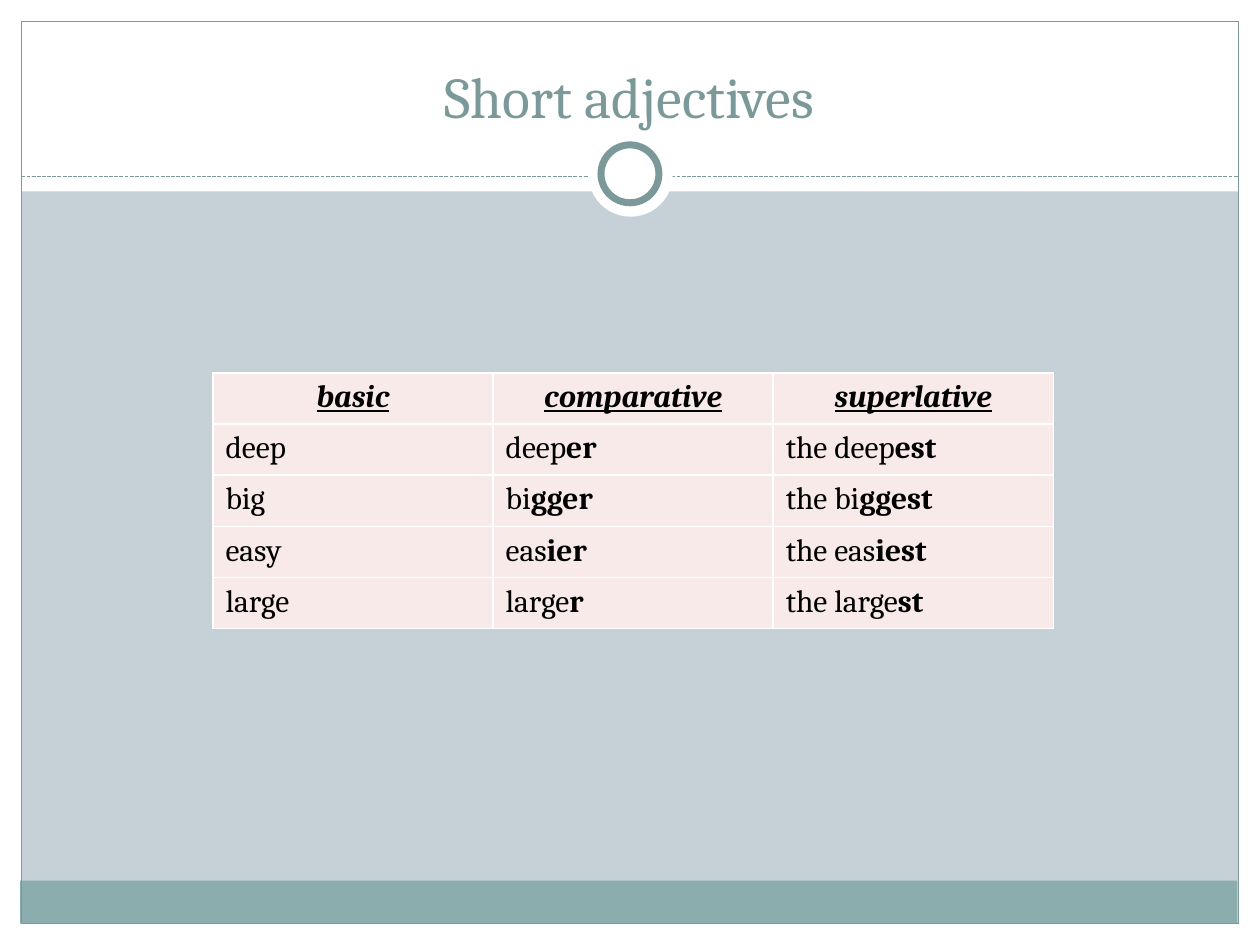
import dataclasses
import pptx
import pptx.util
import pptx.dml.color
import pptx.enum.dml
import pptx.enum.shapes
import pptx.enum.text
import pptx.oxml
import pptx.oxml.ns

Inches = pptx.util.Inches
Pt = pptx.util.Pt
Shape = pptx.enum.shapes.MSO_SHAPE
Align = pptx.enum.text.PP_ALIGN


@dataclasses.dataclass(frozen=True)
class Theme:
    back: str = "C5D1D7"
    white: str = "FFFFFF"
    band: str = "8CADAE"
    accent: str = "7C999A"
    cell: str = "F7EAE9"
    ink: str = "000000"
    face: str = "Cambria"
    title: int = 33
    body: int = 18


theme = Theme()

HEADS = ["basic", "comparative", "superlative"]
WORDS = [
    ("deep", "deep", "er", "est"),
    ("big", "bi", "gger", "ggest"),
    ("easy", "eas", "ier", "iest"),
    ("large", "large", "r", "st"),
]


def rgb(color):
    return pptx.dml.color.RGBColor.from_string(color)


def paint(fill, color):
    fill.solid()
    fill.fore_color.rgb = rgb(color)


def add_shape(slide, kind, box, fill=None, line=None, width=0.75):
    shape = slide.shapes.add_shape(kind, *map(Inches, box))
    shape.shadow.inherit = False
    if fill:
        paint(shape.fill, fill)
    else:
        shape.fill.background()
    if line:
        shape.line.color.rgb = rgb(line)
        shape.line.width = Pt(width)
    else:
        shape.line.fill.background()


def add_rule(slide, left, right, top):
    rule = slide.shapes.add_connector(
        pptx.enum.shapes.MSO_CONNECTOR.STRAIGHT,
        Inches(left), Inches(top), Inches(right), Inches(top))
    rule.line.color.rgb = rgb(theme.accent)
    rule.line.width = Pt(0.75)
    rule.line.dash_style = pptx.enum.dml.MSO_LINE.SQUARE_DOT
    props = rule._element.spPr
    props.append(pptx.oxml.parse_xml(
        f'<a:effectLst {pptx.oxml.ns.nsdecls("a")}/>'))


def set_font(para, size, color):
    para.font.name = theme.face
    para.font.size = Pt(size)
    para.font.color.rgb = rgb(color)


def add_title(slide, text):
    box = slide.shapes.add_textbox(*map(Inches, (0.33, 0.25, 9.33, 0.83)))
    frame = box.text_frame
    frame.word_wrap = True
    frame.vertical_anchor = pptx.enum.text.MSO_ANCHOR.BOTTOM
    para = frame.paragraphs[0]
    para.text = text
    para.alignment = Align.CENTER
    set_font(para, theme.title, theme.accent)


def add_frame(slide):
    rect, oval = Shape.RECTANGLE, Shape.OVAL
    for box in [(0, 7.33, 10, 0.17), (0, 0, 10, 1.52),
                (0, 0, 0.17, 7.5), (9.83, 0, 0.17, 7.5)]:
        add_shape(slide, rect, box, theme.white)
    add_shape(slide, rect, (0.16, 6.99, 9.66, 0.34), theme.band)
    add_shape(slide, rect, (0.17, 0.17, 9.66, 7.16), line=theme.accent)
    add_rule(slide, 0.17, 9.83, 1.4)
    add_shape(slide, oval, (4.67, 1.05, 0.67, 0.67), theme.white)
    add_shape(slide, oval, (4.77, 1.15, 0.46, 0.46), theme.white,
              theme.accent, 4)


def set_edges(cell):
    props = cell._tc.get_or_add_tcPr()
    for side in ("lnL", "lnR", "lnT", "lnB"):
        props.append(pptx.oxml.parse_xml(
            f'<a:{side} {pptx.oxml.ns.nsdecls("a")} w="{Pt(1)}"><a:solidFill>'
            f'<a:srgbClr val="{theme.white}"/></a:solidFill></a:{side}>'))


def fill_cell(cell, stem, end="", head=False):
    set_edges(cell)
    paint(cell.fill, theme.cell)
    para = cell.text_frame.paragraphs[0]
    para.add_run().text = stem
    set_font(para, theme.body, theme.ink)
    para.font.bold = para.font.italic = para.font.underline = head
    if head:
        para.alignment = Align.CENTER
    if end:
        run = para.add_run()
        run.text = end
        run.font.bold = True


def add_grid(slide):
    rows, cols = len(WORDS) + 1, len(HEADS)
    table = slide.shapes.add_table(
        rows, cols, Inches(1.69), Inches(2.96),
        Inches(6.67), Inches(2.03)).table
    table.first_row = table.horz_banding = False
    for col, head in enumerate(HEADS):
        fill_cell(table.cell(0, col), head, head=True)
    for row, (base, stem, more, most) in enumerate(WORDS, 1):
        fill_cell(table.cell(row, 0), base)
        fill_cell(table.cell(row, 1), stem, more)
        fill_cell(table.cell(row, 2), f"the {stem}", most)


def main():
    deck = pptx.Presentation()
    deck.slide_width, deck.slide_height = Inches(10), Inches(7.5)
    slide = deck.slides.add_slide(deck.slide_layouts[6])
    paint(slide.background.fill, theme.back)
    add_frame(slide)
    add_title(slide, "Short adjectives")
    add_grid(slide)
    deck.save("out.pptx")


if __name__ == "__main__":
    main()
